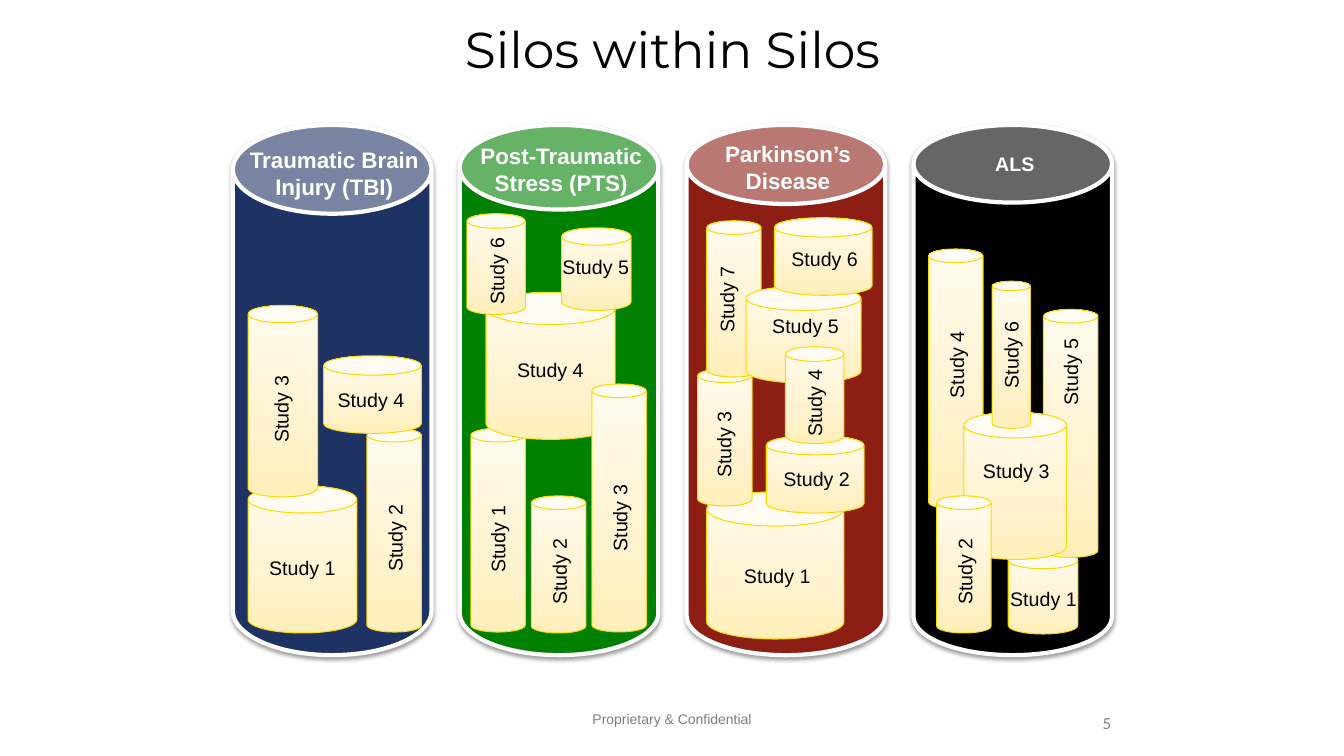
from lxml.etree import SubElement
from pptx import Presentation
from pptx.dml.color import RGBColor
from pptx.enum.shapes import MSO_SHAPE
from pptx.enum.text import MSO_AUTO_SIZE, PP_ALIGN
from pptx.oxml import parse_xml
from pptx.oxml.ns import nsdecls, qn
from pptx.util import Inches, Pt

TITLE = "Silos within Silos"
FOOTER = "Proprietary & Confidential"
PAGE_NUMBER = "5"

# Each study: number, (left, top, width, height) of its can, (left, top) of its label
SILOS = [
    ("Traumatic Brain Injury (TBI)", 16, 1.40, "1E3264", 0.447, [
        (1, (2.46, 4.82, 1.08, 1.46), (2.47, 5.47)),
        (2, (3.64, 4.25, 0.54, 2.02), (3.39, 5.17)),
        (3, (2.46, 3.03, 0.69, 1.90), (2.26, 3.89)),
        (4, (3.21, 3.53, 0.97, 0.77), (3.15, 3.80)),
    ]),
    ("Post-Traumatic Stress (PTS)", 16, 1.36, "008000", 0.426, [
        (1, (4.67, 4.25, 0.54, 2.02), (4.41, 5.18)),
        (2, (5.27, 4.92, 0.54, 1.36), (5.02, 5.50)),
        (4, (4.82, 2.90, 1.28, 1.46), (4.93, 3.50)),
        (5, (5.57, 2.26, 0.69, 0.82), (5.38, 2.48)),
        (6, (4.63, 2.12, 0.58, 1.00), (4.40, 2.52)),
        (3, (5.87, 3.81, 0.54, 2.46), (5.62, 4.97)),
    ]),
    ("Parkinson’s Disease", 16, 1.34, "8C1E14", 0.398, [
        (1, (7.01, 4.88, 1.36, 1.46), (7.18, 5.55)),
        (2, (7.60, 4.32, 0.97, 0.77), (7.57, 4.58)),
        (3, (6.92, 3.66, 0.54, 1.36), (6.65, 4.24)),
        (7, (7.01, 2.19, 0.54, 1.55), (6.68, 2.80)),
        (5, (7.40, 2.84, 1.14, 0.96), (7.46, 3.07)),
        (4, (7.79, 3.44, 0.58, 0.96), (7.55, 3.83)),
        (6, (7.68, 2.16, 0.97, 0.77), (7.65, 2.40)),
    ]),
    ("ALS", 14, 1.46, "000000", 0.391, [
        (1, (10.00, 5.47, 0.69, 0.82), (9.82, 5.77)),
        (5, (10.35, 3.07, 0.54, 2.46), (10.09, 3.52)),
        (4, (9.21, 2.47, 0.54, 2.58), (8.96, 3.45)),
        (3, (9.56, 4.09, 1.02, 1.46), (9.55, 4.50)),
        (2, (9.29, 4.92, 0.54, 1.36), (9.04, 5.50)),
        (6, (9.84, 2.79, 0.38, 1.46), (9.50, 3.35)),
    ]),
]
CREAM_STOPS = [(0, "FFEFBA"), (35, "FFF3CF"), (100, "FFFAED")]
SILO_LEFT, SILO_TOP, SILO_WIDTH, SILO_HEIGHT, SILO_STEP = 2.31, 1.24, 1.97, 5.26, 2.25
TALL_RATIO = 1.5


def color(value):
    return RGBColor.from_string(value)


def add_text(slide, text, box, size, ink, font="Arial", bold=False,
             align=PP_ALIGN.CENTER, inset=None, grow=True):
    label = slide.shapes.add_textbox(*map(Inches, box))
    frame = label.text_frame
    frame.word_wrap = True
    frame.auto_size = MSO_AUTO_SIZE.SHAPE_TO_FIT_TEXT if grow else MSO_AUTO_SIZE.NONE
    if inset is not None:
        for side in ("left", "top", "right", "bottom"):
            setattr(frame, f"margin_{side}", Inches(inset))
    paragraph = frame.paragraphs[0]
    paragraph.alignment = align
    run = paragraph.add_run()
    run.text = text
    for key, value in {"name": font, "size": Pt(size), "bold": bold}.items():
        setattr(run.font, key, value)
    run.font.color.rgb = color(ink)
    return label


def add_can(slide, box, edge, edge_width):
    can = slide.shapes.add_shape(MSO_SHAPE.CAN, *map(Inches, box))
    can.shadow.inherit = False
    can.line.color.rgb = color(edge)
    can.line.width = Pt(edge_width)
    return can


def add_silo_shadow(silo):
    effects = silo._element.spPr.find(qn("a:effectLst"))
    shadow = SubElement(effects, qn("a:outerShdw"), blurRad=str(Pt(3.1)),
                        dist=str(Pt(1.6)), dir="5400000", rotWithShape="0")
    black = SubElement(shadow, qn("a:srgbClr"), val="000000")
    SubElement(black, qn("a:alpha"), val="38000")


def fill_cream(can):
    stops = "".join(f'<a:gs pos="{position * 1000}"><a:srgbClr val="{value}"/></a:gs>'
                    for position, value in CREAM_STOPS)
    gradient = parse_xml(f'<a:gradFill {nsdecls("a")} rotWithShape="1"><a:gsLst>{stops}'
                         '</a:gsLst><a:lin ang="16200000" scaled="0"/></a:gradFill>')
    can._element.spPr.find(qn("a:prstGeom")).addnext(gradient)


def add_silo(slide, index, heading, size, heading_top, body, rim, studies):
    left = SILO_LEFT + index * SILO_STEP
    silo = add_can(slide, (left, SILO_TOP, SILO_WIDTH, SILO_HEIGHT), "FFFFFF", 3)
    silo.adjustments[0] = rim
    silo.fill.solid()
    silo.fill.fore_color.rgb = color(body)
    add_silo_shadow(silo)
    heading_height = 0.64 if size == 16 else 0.34
    add_text(slide, heading, (left + 0.01, heading_top, 1.99, heading_height),
             size, "FFFFFF", bold=True)
    for number, box, label_at in studies:
        fill_cream(add_can(slide, box, "FADA05", 0.75))
        label = add_text(slide, f"Study {number}", (*label_at, 1.06, 0.34), 14, "000000")
        width, height = box[2:]
        if height > TALL_RATIO * width:
            label.rotation = 270


def main():
    deck = Presentation()
    deck.slide_width, deck.slide_height = Inches(13.33), Inches(7.5)
    slide = deck.slides.add_slide(deck.slide_layouts[6])
    add_text(slide, TITLE, (1.79, 0.13, 9.76, 0.71), 36, "000000", font="Montserrat")
    for index, silo in enumerate(SILOS):
        add_silo(slide, index, *silo)
    add_text(slide, FOOTER, (5.08, 7, 3.17, 0.4), 10, "7F7F7F", grow=False)
    add_text(slide, PAGE_NUMBER, (10.89, 7.07, 0.13, 0.19), 12, "7F7E7E", font="Calibri",
             align=PP_ALIGN.RIGHT, inset=0, grow=False)
    deck.save("out.pptx")


if __name__ == "__main__":
    main()
